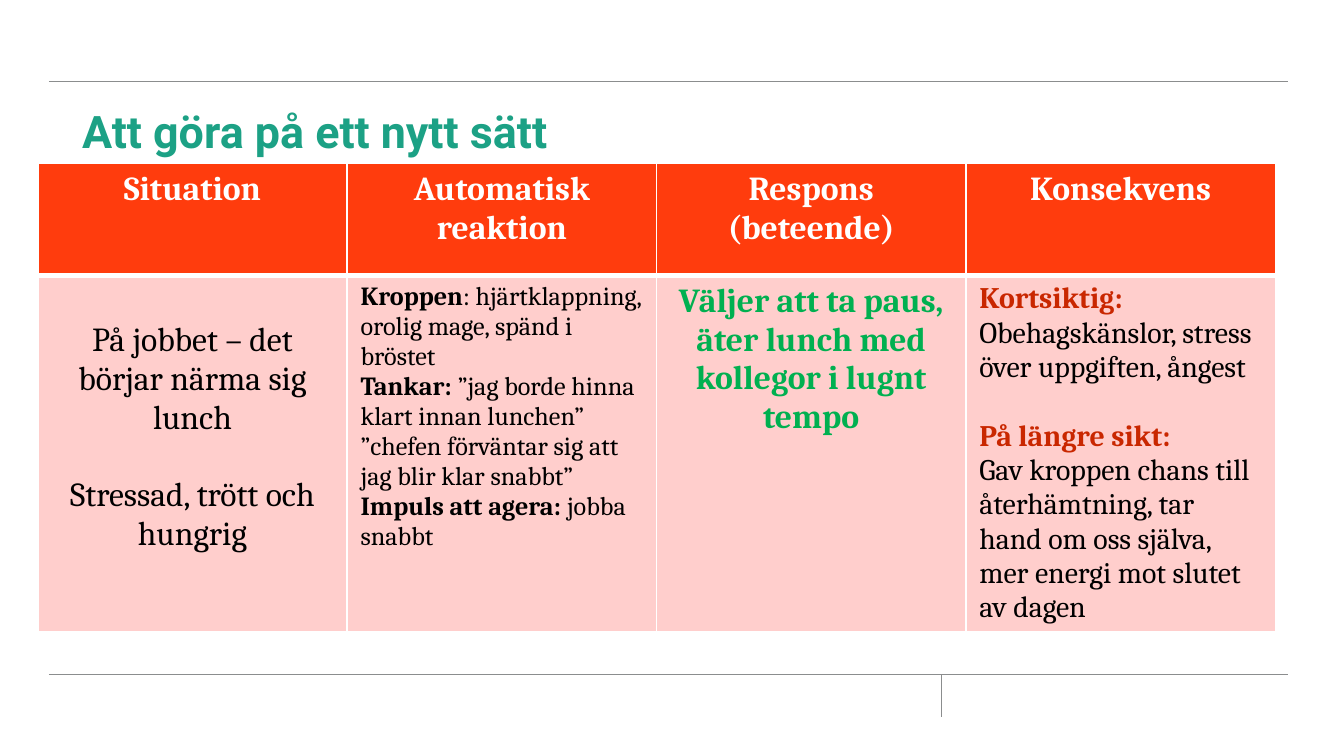
"""Builds the slide about acting in a new way, with a table of four steps."""
from dataclasses import dataclass

from lxml import etree
from pptx import Presentation
from pptx.dml.color import RGBColor
from pptx.enum.shapes import MSO_CONNECTOR
from pptx.enum.text import MSO_ANCHOR, MSO_AUTO_SIZE, PP_ALIGN
from pptx.oxml.ns import qn
from pptx.slide import Slide
from pptx.util import Pt

STRAIGHT = MSO_CONNECTOR.STRAIGHT
BOTTOM = MSO_ANCHOR.BOTTOM
NO_AUTOFIT = MSO_AUTO_SIZE.NONE
LEFT, CENTER = PP_ALIGN.LEFT, PP_ALIGN.CENTER
TITLE_ONLY = 5

COLORS = {
    "rule": "8B8D8E",
    "title": "1CA185",
    "header": "FF3C0D",
    "body": "FFCECC",
    "white": "FFFFFF",
    "black": "000000",
    "choice": "00B050",
    "term": "C92700",
}

HEADERS = ["Situation", "Automatisk reaktion", "Respons (beteende)", "Konsekvens"]
TERM = {"bold": True, "color": "term"}
BOLD = {"bold": True}
PLAIN = {}

SITUATION = [
    [("På jobbet – det börjar närma sig lunch", PLAIN)],
    [("Stressad, trött och hungrig", PLAIN)],
]
REACTION = [
    [("Kroppen", BOLD), (": hjärtklappning, orolig mage, spänd i bröstet", PLAIN)],
    [
        ("Tankar: ", BOLD),
        ("”jag borde hinna klart innan lunchen” "
         "”chefen förväntar sig att jag blir klar snabbt”", PLAIN),
    ],
    [("Impuls att agera: ", BOLD), ("jobba snabbt", PLAIN)],
]
RESPONSE = [
    [("Väljer att ta paus, äter lunch med kollegor i lugnt tempo",
      {"bold": True, "color": "choice"})],
]
CONSEQUENCE = [
    [("Kortsiktig: ", TERM), ("Obehagskänslor, stress över uppgiften, ångest", PLAIN)],
    [("På längre sikt:", TERM)],
    [("Gav kroppen chans till återhämtning, tar hand om oss själva, "
      "mer energi mot slutet av dagen", PLAIN)],
]


def write(paragraph, text, *, size=18, font="Cambria", color="black", bold=False):
    """Add a formatted run to a paragraph."""
    run = paragraph.add_run()
    run.text = text
    run.font.size = Pt(size)
    run.font.name = font
    run.font.bold = bold
    run.font.color.rgb = RGBColor.from_string(COLORS[color])


@dataclass
class SlideBuilder:
    """Holds the style and the current slide."""
    slide: Slide
    rule_width: float = 0.25
    border_width: float = 1
    divider_width: float = 3

    def rule(self, start, end):
        """Draw a thin line between two points."""
        line = self.slide.shapes.add_connector(
            STRAIGHT, *(Pt(value) for value in (*start, *end)))
        line.line.color.rgb = RGBColor.from_string(COLORS["rule"])
        line.line.width = Pt(self.rule_width)
        etree.SubElement(line._element.spPr, qn("a:effectLst"))

    def title(self, text, left, top, width, height):
        """Place and fill the title placeholder."""
        title = self.slide.shapes.title
        title.left, title.top = Pt(left), Pt(top)
        title.width, title.height = Pt(width), Pt(height)
        frame = title.text_frame
        frame.word_wrap = True
        frame.auto_size = NO_AUTOFIT
        frame.vertical_anchor = BOTTOM
        frame.paragraphs[0].alignment = LEFT
        write(frame.paragraphs[0], text, size=24, font="Roboto", color="title", bold=True)

    def table(self, left, top, column_width, row_heights, column_count):
        """Add a plain table with equal columns."""
        table = self.slide.shapes.add_table(
            len(row_heights), column_count, Pt(left), Pt(top),
            Pt(column_width * column_count), Pt(sum(row_heights))).table
        table.first_row = table.horz_banding = False
        for column in table.columns:
            column.width = Pt(column_width)
        for row, height in zip(table.rows, row_heights):
            row.height = Pt(height)
        return table

    def borders(self, cell, **widths):
        """Give a cell white borders, with other widths for the named sides."""
        properties = cell._tc.get_or_add_tcPr()
        for side in "LRTB":
            width = Pt(widths.get(side, self.border_width))
            line = etree.SubElement(properties, qn(f"a:ln{side}"), w=str(width))
            fill = etree.SubElement(line, qn("a:solidFill"))
            etree.SubElement(fill, qn("a:srgbClr"), val=COLORS["white"])

    def cell(self, cell, paragraphs, fill, divider, *, size=18, alignment=LEFT,
             gap=0, margin_top=3.6):
        """Fill a cell, with a gap before its second paragraph."""
        self.borders(cell, **{divider: self.divider_width})
        cell.fill.solid()
        cell.fill.fore_color.rgb = RGBColor.from_string(COLORS[fill])
        cell.margin_top = Pt(margin_top)
        frame = cell.text_frame
        for index, runs in enumerate(paragraphs):
            paragraph = frame.add_paragraph() if index else frame.paragraphs[0]
            paragraph.alignment = alignment
            if index == 1 and gap:
                paragraph.space_before = Pt(gap)
            for text, style in runs:
                write(paragraph, text, size=size, **style)


def main():
    """Build and save the presentation."""
    presentation = Presentation()
    presentation.slide_width, presentation.slide_height = Pt(720), Pt(405)
    slide = presentation.slides.add_slide(presentation.slide_layouts[TITLE_ONLY])
    builder = SlideBuilder(slide)

    rule_left, rule_right, footer_top = 26.25, 690, 361.25
    builder.rule((rule_left, 43.75), (rule_right, 43.75))
    builder.rule((rule_left, footer_top), (rule_right, footer_top))
    builder.rule((504, footer_top), (504, 384))
    builder.title("Att göra på ett nytt sätt", 36.75, 49.5, 425.5, 38.25)

    table = builder.table(20.25, 87.5, 165.75, (60, 190), len(HEADERS))
    for column, header in enumerate(HEADERS):
        runs = [(header, {"bold": True, "color": "white"})]
        builder.cell(table.cell(0, column), [runs], "header", "B", alignment=CENTER)

    body = [
        (SITUATION, {"alignment": CENTER, "gap": 21, "margin_top": 24.6}),
        (REACTION, {"size": 14}),
        (RESPONSE, {"alignment": CENTER}),
        (CONSEQUENCE, {"size": 16, "gap": 18.5}),
    ]
    for column, (paragraphs, layout) in enumerate(body):
        builder.cell(table.cell(1, column), paragraphs, "body", "T", **layout)

    presentation.save("out.pptx")


if __name__ == "__main__":
    main()
